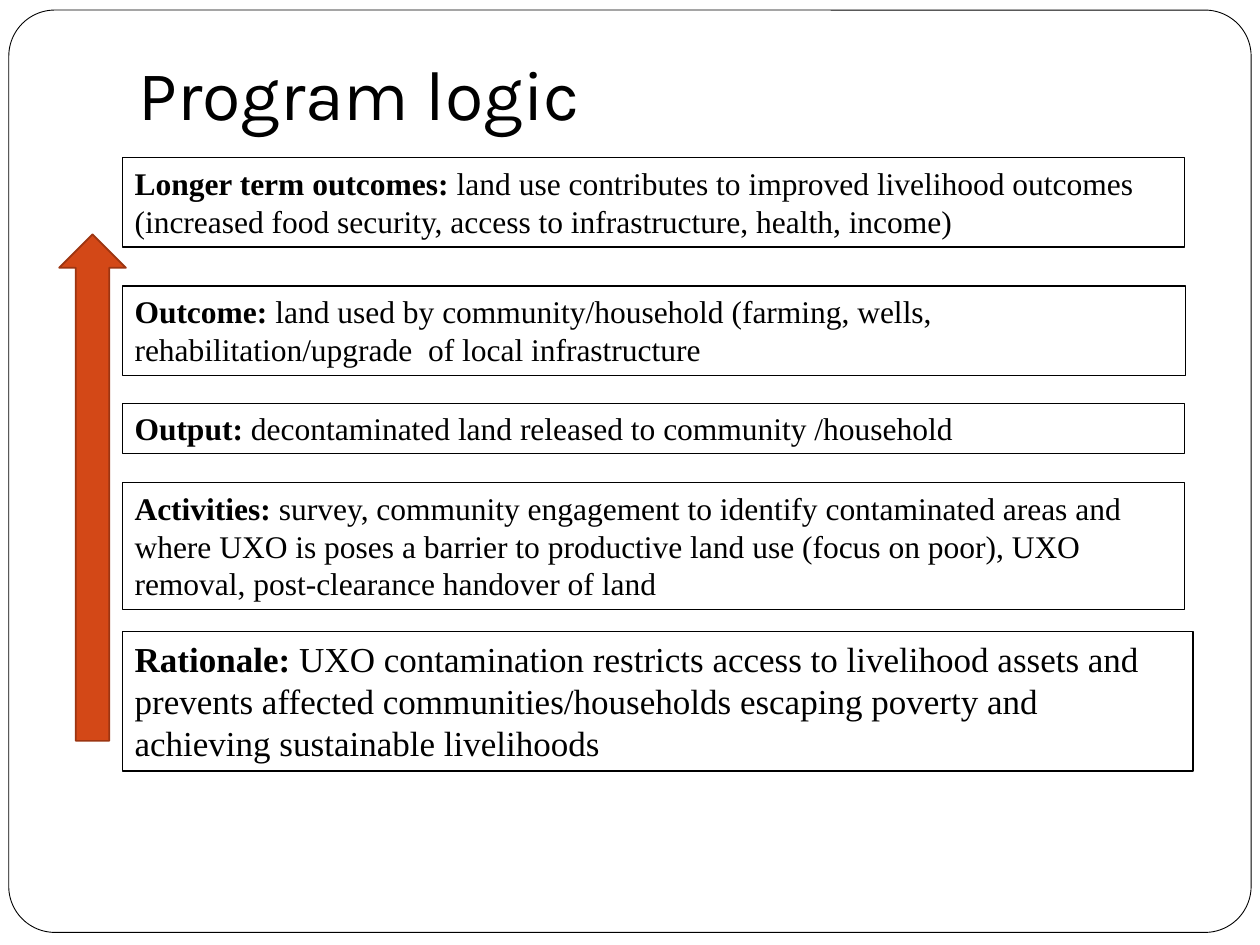
from pptx import Presentation
from pptx.dml.color import RGBColor
from pptx.enum.shapes import MSO_SHAPE
from pptx.enum.text import MSO_ANCHOR, MSO_AUTO_SIZE, PP_ALIGN
from pptx.util import Inches, Pt

RECT = MSO_SHAPE.RECTANGLE
ROUND = MSO_SHAPE.ROUNDED_RECTANGLE
ARROW = MSO_SHAPE.UP_ARROW
TOP, BOTTOM = MSO_ANCHOR.TOP, MSO_ANCHOR.BOTTOM
GROW = MSO_AUTO_SIZE.SHAPE_TO_FIT_TEXT
LEFT = PP_ALIGN.LEFT
BLACK, WHITE = "000000", "FFFFFF"

prs = Presentation()
prs.slide_width, prs.slide_height = Inches(10), Inches(7.5)
slide = prs.slides.add_slide(prs.slide_layouts[6])


def add_box(kind, at, fill, line, width):
    """Add a preset shape; fill None leaves it see-through."""
    shape = slide.shapes.add_shape(kind, *map(Inches, at))
    shape.shadow.inherit = False
    if fill:
        shape.fill.solid()
        shape.fill.fore_color.rgb = RGBColor.from_string(fill)
    else:
        shape.fill.background()
    shape.line.color.rgb = RGBColor.from_string(line)
    shape.line.width = Pt(width)
    return shape


def add_run(para, text, font, size, bold=False):
    run = para.add_run()
    run.text = text
    run.font.name = font
    run.font.size = Pt(size)
    run.font.bold = bold
    run.font.color.rgb = RGBColor.from_string(BLACK)


frame = add_box(ROUND, (0.07, 0.08, 9.86, 7.32), WHITE, BLACK, 0.5)
frame.adjustments[0] = 0.05

title = slide.shapes.add_textbox(Inches(1), Inches(0.3), Inches(8.5), Inches(0.87))
body = title.text_frame
body.word_wrap = True
body.vertical_anchor = BOTTOM
body.margin_bottom = Inches(0.1)
add_run(body.paragraphs[0], "Program logic", "Karla", 40)

# top, width, height, text size, label, text
steps = [
    (5.01, 8.5, 1.11, 20, "Rationale:",
     "UXO contamination restricts access to livelihood assets and prevents "
     "affected communities/households escaping poverty and achieving "
     "sustainable livelihoods"),
    (3.83, 8.43, 1.01, 18, "Activities:",
     "survey, community engagement to identify contaminated areas and where "
     "UXO is poses a barrier to productive land use (focus on poor), UXO "
     "removal, post-clearance handover of land"),
    (3.2, 8.43, 0.4, 18, "Output:",
     "decontaminated land released to community /household"),
    (2.27, 8.44, 0.71, 18, "Outcome:",
     "land used by community/household (farming, wells, "
     "rehabilitation/upgrade  of local infrastructure"),
    (1.25, 8.43, 0.71, 18, "Longer term outcomes:",
     "land use contributes to improved livelihood outcomes (increased food "
     "security, access to infrastructure, health, income)"),
]
for top, width, height, size, label, text in steps:
    box = add_box(RECT, (0.97, top, width, height), None, BLACK, 0.75)
    body = box.text_frame
    body.word_wrap = True
    body.auto_size = GROW
    body.vertical_anchor = TOP
    para = body.paragraphs[0]
    para.alignment = LEFT
    add_run(para, label, "Times New Roman", size, True)
    add_run(para, " " + text, "Times New Roman", size)

add_box(ARROW, (0.47, 1.86, 0.53, 4.02), "D34817", "9C3511", 1)

prs.save("out.pptx")
